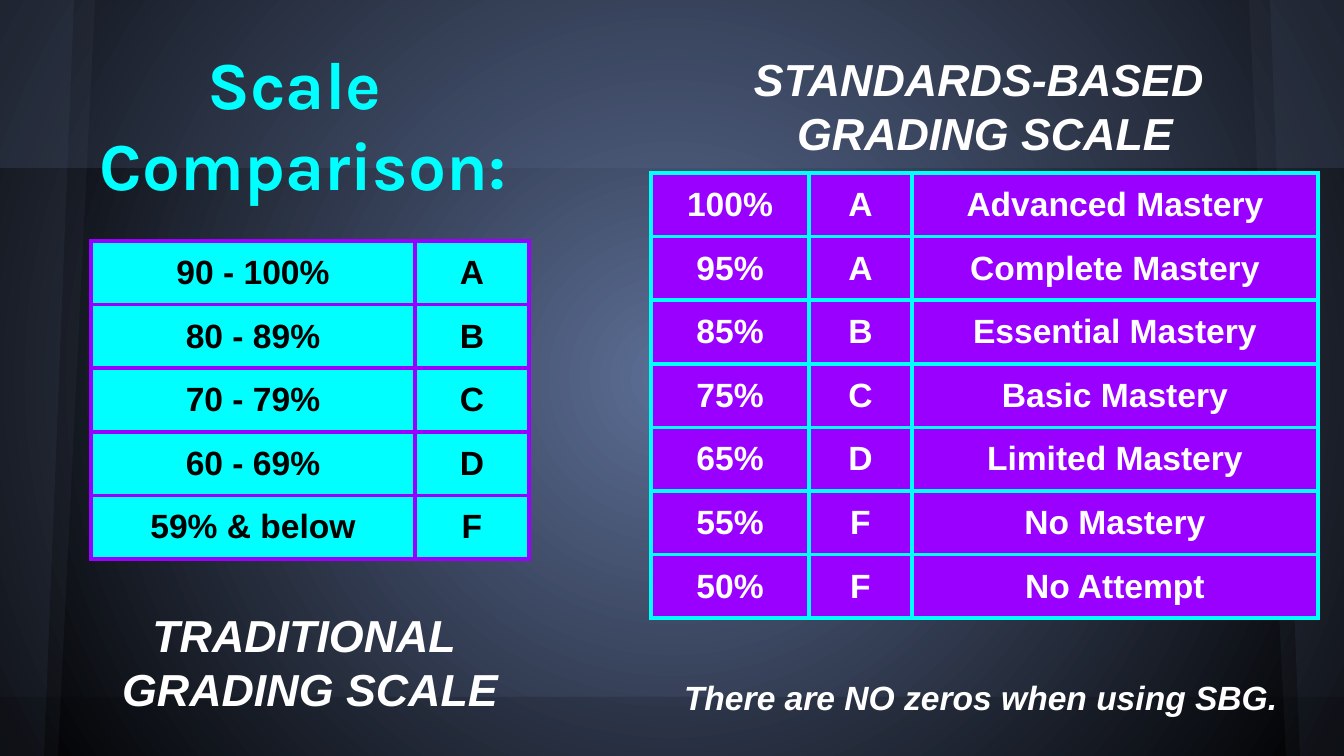
from lxml import etree
from pptx import Presentation
from pptx.dml.color import RGBColor
from pptx.enum.shapes import MSO_SHAPE
from pptx.enum.text import MSO_ANCHOR, PP_ALIGN
from pptx.oxml import parse_xml
from pptx.oxml.ns import qn
from pptx.util import Pt

RECT = MSO_SHAPE.RECTANGLE
TOP, MIDDLE = MSO_ANCHOR.TOP, MSO_ANCHOR.MIDDLE
LEFT, CENTER = PP_ALIGN.LEFT, PP_ALIGN.CENTER
NS = "http://schemas.openxmlformats.org/drawingml/2006/main"
WIDTH, HEIGHT = 1344, 756
PX = 9144000 / WIDTH
INSET = 13

CYAN, PURPLE, WHITE, BLACK = "00FFFF", "9900FF", "FFFFFF", "000000"
SLATE, GREY = "5C6E95", "5A6378"

# Content: backdrop
BANDS = [  # top, height, colour, opacity %
    (0, 168, SLATE, 20),
    (697, 59, BLACK, 15),
]
SIDE_PANELS = [  # width at top, width at bottom, colour, opacity %
    (95, 58, GREY, 10),
    (74, 44, SLATE, 10),
]

# Content: captions
HEADING = {"size": Pt(36), "name": "Karla", "bold": True}
LABEL = {"size": Pt(24), "name": "Arial", "bold": True, "italic": True}
NOTE = {**LABEL, "size": Pt(18)}
CELL = {"size": Pt(18), "name": "Arial", "bold": True}
CAPTIONS = [  # box, lines, font, colour, alignment, anchor
    ((34, 23, 538, 200), ["Scale ", "Comparison:"], HEADING, CYAN, CENTER, MIDDLE),
    ((91, 595, 438, 126), ["TRADITIONAL ", "GRADING SCALE"], LABEL, WHITE, CENTER, TOP),
    ((653, 39, 664, 126), ["STANDARDS-BASED ", "GRADING SCALE"], LABEL, WHITE, CENTER, TOP),
    ((671, 664, 626, 71), ["There are NO zeros when using SBG."], NOTE, WHITE, LEFT, TOP),
]

# Content: grading scales
ROW_HEIGHT = 56
SCALES = [
    {"at": (91, 241), "columns": (324, 114), "fill": CYAN, "border": PURPLE, "text": BLACK,
     "rows": [("90 - 100%", "A"), ("80 - 89%", "B"), ("70 - 79%", "C"),
              ("60 - 69%", "D"), ("59% & below", "F")]},
    {"at": (651, 173), "columns": (158, 103, 406), "fill": PURPLE, "border": CYAN, "text": WHITE,
     "rows": [("100%", "A", "Advanced Mastery"), ("95%", "A", "Complete Mastery"),
              ("85%", "B", "Essential Mastery"), ("75%", "C", "Basic Mastery"),
              ("65%", "D", "Limited Mastery"), ("55%", "F", "No Mastery"),
              ("50%", "F", "No Attempt")]},
]


def px(*lengths):
    return [round(length * PX) for length in lengths]


def rgb(color):
    return RGBColor.from_string(color)


def paint(shape, color, opacity):
    shape.shadow.inherit = False
    shape.fill.solid()
    shape.fill.fore_color.rgb = rgb(color)
    shape.line.fill.background()
    tint = shape._element.spPr.find(qn("a:solidFill"))[0]
    etree.SubElement(tint, qn("a:alpha"), val=str(opacity * 1000))


def write(frame, lines, font, color, align):
    for i, line in enumerate(lines):
        paragraph = frame.paragraphs[0] if i == 0 else frame.add_paragraph()
        paragraph.alignment = align
        run = paragraph.add_run()
        run.text = line
        run.font.color.rgb = rgb(color)
        for key, value in font.items():
            setattr(run.font, key, value)


def set_margins(target):
    for side in ("left", "right", "top", "bottom"):
        setattr(target, f"margin_{side}", px(INSET)[0])


def add_borders(cell, color):
    properties = cell._tc.get_or_add_tcPr()
    for i, side in enumerate(("lnL", "lnR", "lnT", "lnB")):
        properties.insert(i, parse_xml(
            f'<a:{side} xmlns:a="{NS}" w="{Pt(2.25)}"><a:solidFill>'
            f'<a:srgbClr val="{color}"/></a:solidFill></a:{side}>'))


def add_background(slide):
    fill = slide.background.fill
    fill.gradient()
    for stop, color in zip(fill.gradient_stops, (SLATE, BLACK)):
        stop.color.rgb = rgb(color)
    gradient = slide._element.cSld.find(".//" + qn("a:gradFill"))
    for stop, position in zip(gradient.find(qn("a:gsLst")), ("0", "100000")):
        stop.set("pos", position)
    gradient.replace(gradient.find(qn("a:lin")), parse_xml(
        f'<a:path xmlns:a="{NS}" path="circle">'
        '<a:fillToRect l="50000" t="50000" r="50000" b="50000"/></a:path>'))


def add_side_panel(slide, edge, direction, top_width, bottom_width):
    builder = slide.shapes.build_freeform(edge, 0, scale=PX)
    builder.add_line_segments([
        (edge + direction * top_width, 0),
        (edge + direction * bottom_width, HEIGHT),
        (edge, HEIGHT)])
    return builder.convert_to_shape()


def add_scale(slide, scale):
    rows, columns = scale["rows"], scale["columns"]
    table = slide.shapes.add_table(
        len(rows), len(columns),
        *px(*scale["at"], sum(columns), ROW_HEIGHT * len(rows))).table
    table.first_row = table.horz_banding = False
    for column, width in zip(table.columns, columns):
        column.width = px(width)[0]
    for r, row in enumerate(rows):
        for c, text in enumerate(row):
            cell = table.cell(r, c)
            set_margins(cell)
            cell.fill.solid()
            cell.fill.fore_color.rgb = rgb(scale["fill"])
            add_borders(cell, scale["border"])
            write(cell.text_frame, [text], CELL, scale["text"], CENTER)


def main():
    presentation = Presentation()
    presentation.slide_width, presentation.slide_height = px(WIDTH, HEIGHT)
    slide = presentation.slides.add_slide(presentation.slide_layouts[6])

    # Backdrop: header band, side panels, footer band
    add_background(slide)
    header, footer = BANDS
    for top, height, color, opacity in (header,):
        paint(slide.shapes.add_shape(RECT, *px(0, top, WIDTH, height)), color, opacity)
    for edge, direction in ((0, 1), (WIDTH, -1)):
        for top_width, bottom_width, color, opacity in SIDE_PANELS:
            paint(add_side_panel(slide, edge, direction, top_width, bottom_width), color, opacity)
    for top, height, color, opacity in (footer,):
        paint(slide.shapes.add_shape(RECT, *px(0, top, WIDTH, height)), color, opacity)

    # Grading scales
    for scale in SCALES:
        add_scale(slide, scale)

    # Title, labels and note
    for box, lines, font, color, align, anchor in CAPTIONS:
        frame = slide.shapes.add_textbox(*px(*box)).text_frame
        frame.word_wrap = True
        frame.vertical_anchor = anchor
        set_margins(frame)
        write(frame, lines, font, color, align)

    presentation.save("out.pptx")


if __name__ == "__main__":
    main()
